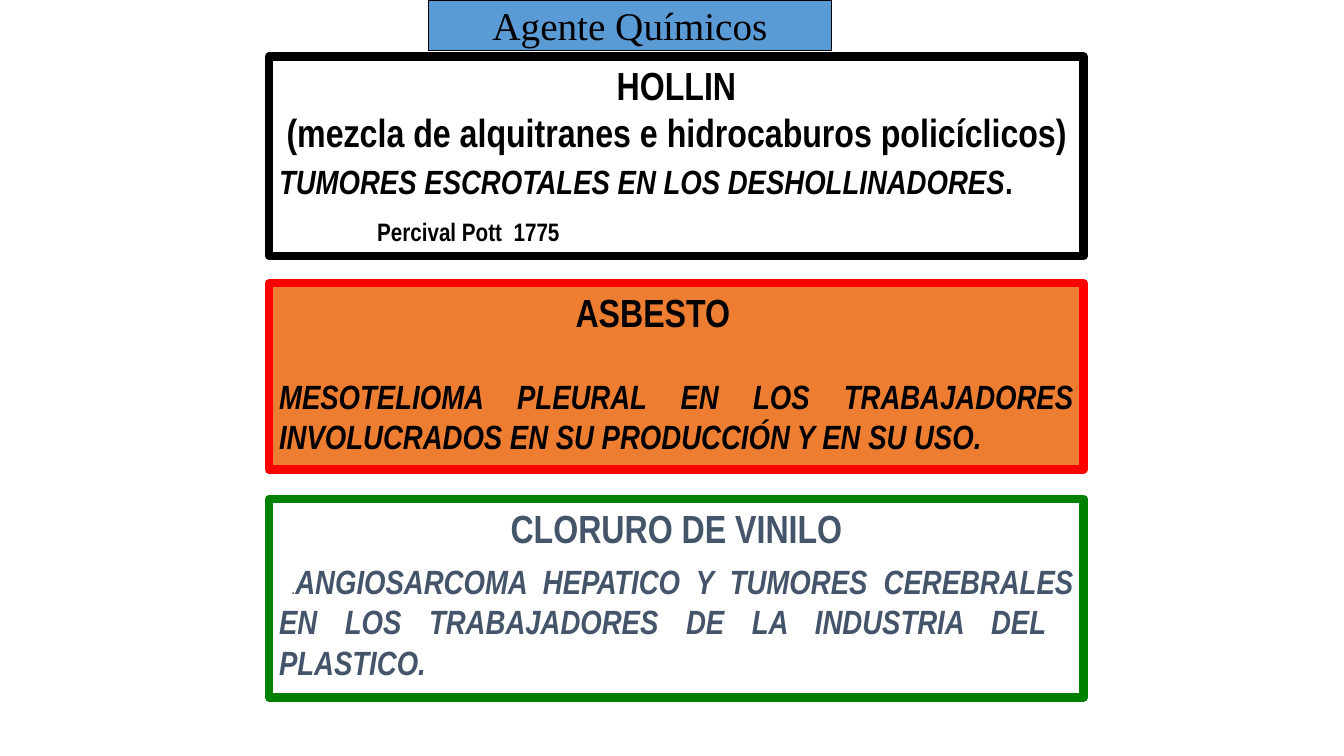
"""Build a slide on chemical agents and the tumours they cause."""
from pptx import Presentation
from pptx.dml.color import RGBColor
from pptx.enum.shapes import MSO_SHAPE
from pptx.enum.text import MSO_ANCHOR, MSO_AUTO_SIZE, PP_ALIGN
from pptx.util import Pt

RECTANGLE = MSO_SHAPE.RECTANGLE
TOP, MIDDLE = MSO_ANCHOR.TOP, MSO_ANCHOR.MIDDLE
NO_AUTOSIZE = MSO_AUTO_SIZE.NONE
CENTER, JUSTIFY, LEFT = PP_ALIGN.CENTER, PP_ALIGN.JUSTIFY, PP_ALIGN.LEFT

BLACK = RGBColor(0x00, 0x00, 0x00)
WHITE = RGBColor(0xFF, 0xFF, 0xFF)
BLUE = RGBColor(0x5B, 0x9B, 0xD5)
ORANGE = RGBColor(0xED, 0x7D, 0x31)
RED = RGBColor(0xFF, 0x00, 0x00)
GREEN = RGBColor(0x00, 0x80, 0x00)
SLATE = RGBColor(0x44, 0x54, 0x6A)

BOX_LEFT, BOX_WIDTH = 192.24, 581.76
PERCIVAL_INDENT = 70


def paint(shape, fill, line, line_width):
    shape.fill.solid()
    shape.fill.fore_color.rgb = fill
    shape.line.color.rgb = line
    shape.line.width = Pt(line_width)


def style(run, font, size, color, bold, italic):
    run.font.name = font
    run.font.size = Pt(size)
    run.font.color.rgb = color
    run.font.bold = bold
    run.font.italic = italic


presentation = Presentation()
presentation.slide_width = Pt(960)
presentation.slide_height = Pt(540)
slide = presentation.slides.add_slide(presentation.slide_layouts[5])

title = slide.shapes.title
title.left, title.top, title.width, title.height = Pt(306), Pt(0), Pt(288), Pt(36)
paint(title, BLUE, BLACK, 0.75)
title.text_frame.text = "Agente Químicos"
title.text_frame.auto_size = NO_AUTOSIZE
title.text_frame.word_wrap = False
title.text_frame.vertical_anchor = MIDDLE
title.text_frame.paragraphs[0].alignment = CENTER
style(title.text_frame.paragraphs[0].runs[0], "Times New Roman", 28, BLACK, False, False)

# Box: top, height, fill, line, text colour, paragraphs.
# Paragraph: alignment, space before, indent, runs of (text, size, bold, italic).
agents = [
    (40.32, 142.56, WHITE, BLACK, BLACK, [
        (CENTER, 0, 0, [("HOLLIN", 28, True, False)]),
        (CENTER, 0, 0, [("(mezcla de alquitranes e hidrocaburos policíclicos)", 28, True, False)]),
        (JUSTIFY, 4, 0, [("TUMORES ESCROTALES EN LOS DESHOLLINADORES", 24, True, True),
                         (".", 24, True, False)]),
        (LEFT, 10.5, PERCIVAL_INDENT, [("Percival Pott  1775", 18, True, False)]),
    ]),
    (202.32, 133.2, ORANGE, RED, BLACK, [
        (CENTER, 0, 0, [("ASBESTO", 28, True, False), ("\t", 24, True, False)]),
        (JUSTIFY, 28.8, 0, [("MESOTELIOMA PLEURAL EN LOS TRABAJADORES INVOLUCRADOS "
                             "EN SU PRODUCCIÓN Y EN SU USO.", 24, True, True)]),
    ]),
    (356.4, 141.84, WHITE, GREEN, SLATE, [
        (CENTER, 0, 0, [("CLORURO DE VINILO", 28, True, False)]),
        (JUSTIFY, 7.2, 0, [(" .", 12, False, False),
                           ("ANGIOSARCOMA HEPATICO Y TUMORES CEREBRALES EN LOS TRABAJADORES "
                            "DE LA INDUSTRIA DEL  PLASTICO.", 24, True, True)]),
    ]),
]

for top, height, fill, line, text_color, paragraphs in agents:
    box = slide.shapes.add_shape(RECTANGLE, Pt(BOX_LEFT), Pt(top), Pt(BOX_WIDTH), Pt(height))
    box.shadow.inherit = False
    paint(box, fill, line, 6)
    text_frame = box.text_frame
    text_frame.word_wrap = True
    text_frame.auto_size = NO_AUTOSIZE
    text_frame.vertical_anchor = TOP
    for index, (alignment, space_before, indent, runs) in enumerate(paragraphs):
        paragraph = text_frame.add_paragraph() if index else text_frame.paragraphs[0]
        paragraph.alignment = alignment
        paragraph.space_before = Pt(space_before)
        paragraph._p.get_or_add_pPr().set("marL", str(Pt(indent)))
        for text, size, bold, italic in runs:
            run = paragraph.add_run()
            run.text = text
            style(run, "Arial Narrow", size, text_color, bold, italic)

presentation.save("out.pptx")
